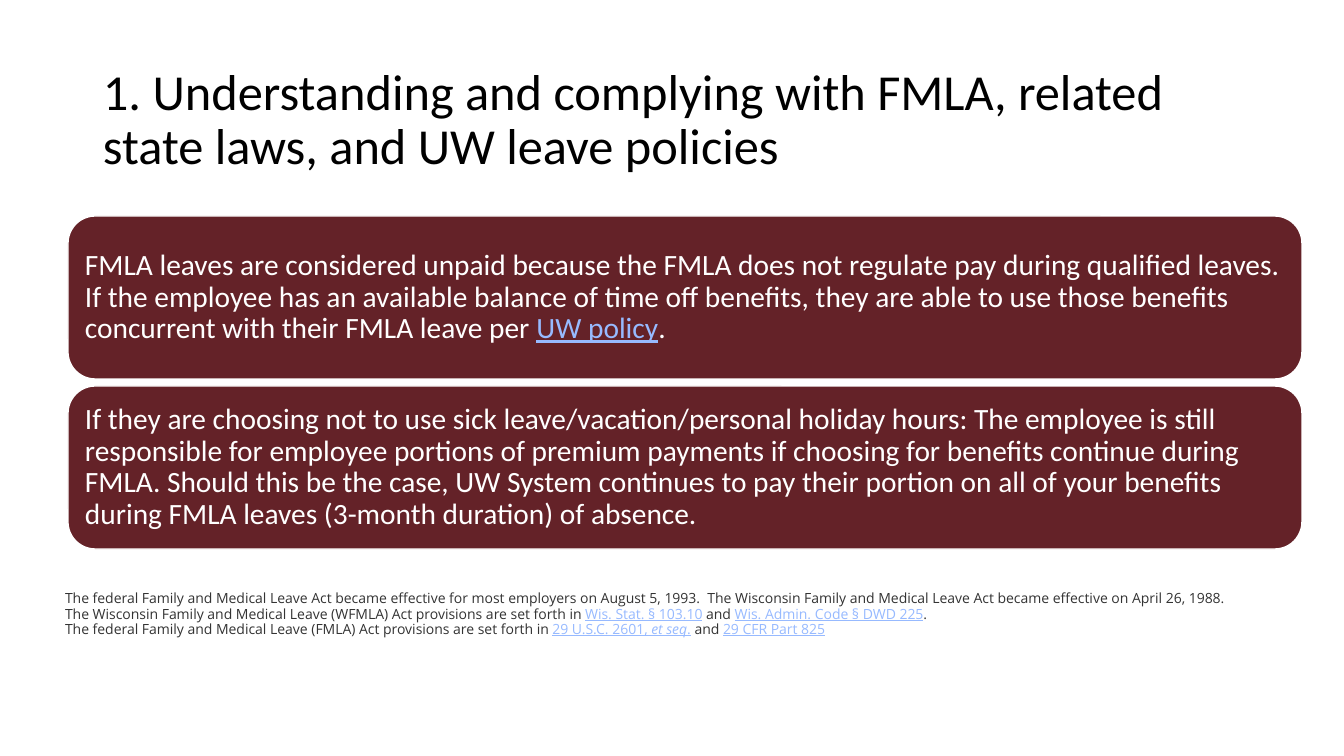
from pptx import Presentation
from pptx import util as u
from pptx.dml.color import RGBColor
from pptx.enum import shapes, text

# Each paragraph is a list of (words, style) runs; styles: "", "link", "link italic"
TITLE = [[("1. Understanding and complying with FMLA, related state laws, "
           "and UW leave policies", "")]]
CARDS = [
    [[("FMLA leaves are considered unpaid because the FMLA does not regulate pay during "
       "qualified leaves. If the employee has an available balance of time off benefits, "
       "they are able to use those benefits concurrent with their FMLA leave per ", ""),
      ("UW policy", "link"), (".", "")]],
    [[("If they are choosing not to use sick leave/vacation/personal holiday hours: "
       "The employee is still responsible for employee portions of premium payments if "
       "choosing for benefits continue during FMLA. Should this be the case, UW System "
       "continues to pay their portion on all of your benefits during FMLA leaves "
       "(3-month duration) of absence.", "")]],
]
LEGAL_NOTES = [
    [("The federal Family and Medical Leave Act became effective for most employers on "
      "August 5, 1993.  The Wisconsin Family and Medical Leave Act became effective on "
      "April 26, 1988.", "")],
    [("The Wisconsin Family and Medical Leave (WFMLA) Act provisions are set forth in ", ""),
     ("Wis. Stat. § 103.10", "link"), (" and ", ""),
     ("Wis. Admin. Code § DWD 225", "link"), (".", "")],
    [("The federal Family and Medical Leave (FMLA) Act provisions are set forth in ", ""),
     ("29 U.S.C. 2601, ", "link"), ("et seq", "link italic"), (".", "link"),
     (" and ", ""), ("29 CFR Part 825", "link")],
]


class Theme:
    title_ink = "000000"
    note_ink = "333333"
    link = "97BAFF"
    card = "642228"
    white = "FFFFFF"
    heading_font = "Calibri"
    note_font = "Open Sans"
    title_size, card_size, note_size = 36, 21, 10
    line_spacing = 0.9


EMU_PER_PX = 914400 / 100.8
TITLE_BOX = (93, 75, 1159, 146)
NOTES_BOX = (55, 584, 1234, 61)
CARD_LEFT, CARD_TOP, CARD_W, CARD_H, CARD_PITCH = 68, 216, 1234, 163, 170


def px(n):
    return u.Emu(round(n * EMU_PER_PX))


def color(hex_code):
    return RGBColor.from_string(hex_code)


def write(sp, paragraphs, *, size, ink, font=Theme.heading_font, insets=(10, 5, 10, 5)):
    """Fill a shape with styled runs; insets are left, top, right, bottom in px."""
    tf = sp.text_frame
    tf.word_wrap = True
    tf.vertical_anchor = text.MSO_ANCHOR.MIDDLE
    tf.margin_left, tf.margin_top, tf.margin_right, tf.margin_bottom = map(px, insets)
    for i, runs in enumerate(paragraphs):
        p = tf.add_paragraph() if i else tf.paragraphs[0]
        p.alignment = text.PP_ALIGN.LEFT
        p.line_spacing = Theme.line_spacing
        for words, style in runs:
            r = p.add_run()
            r.text = words
            r.font.name = font
            r.font.size = u.Pt(size)
            r.font.color.rgb = color(Theme.link if "link" in style else ink)
            r.font.underline = "link" in style
            r.font.italic = "italic" in style


def add_card(s, top, paragraphs):
    sp = s.shapes.add_shape(shapes.MSO_SHAPE.ROUNDED_RECTANGLE,
                            *map(px, (CARD_LEFT, top, CARD_W, CARD_H)))
    sp.shadow.inherit = False
    sp.fill.solid()
    sp.fill.fore_color.rgb = color(Theme.card)
    sp.line.color.rgb = color(Theme.white)
    sp.line.width = u.Pt(1)
    write(sp, paragraphs, size=Theme.card_size, ink=Theme.white, insets=(9, 9, 9, 9))


def main():
    prs = Presentation()
    prs.slide_width, prs.slide_height = px(1344), px(756)
    s = prs.slides.add_slide(prs.slide_layouts[6])

    title = s.shapes.add_textbox(*map(px, TITLE_BOX))
    # The deep bottom inset lifts the two lines above the middle of the box
    write(title, TITLE, size=Theme.title_size, ink=Theme.title_ink, insets=(10, 5, 10, 59))

    notes = s.shapes.add_textbox(*map(px, NOTES_BOX))
    notes.fill.solid()
    notes.fill.fore_color.rgb = color(Theme.white)
    write(notes, LEGAL_NOTES, size=Theme.note_size, ink=Theme.note_ink, font=Theme.note_font)

    for i, paragraphs in enumerate(CARDS):
        add_card(s, CARD_TOP + i * CARD_PITCH, paragraphs)

    prs.save("out.pptx")


if __name__ == "__main__":
    main()
